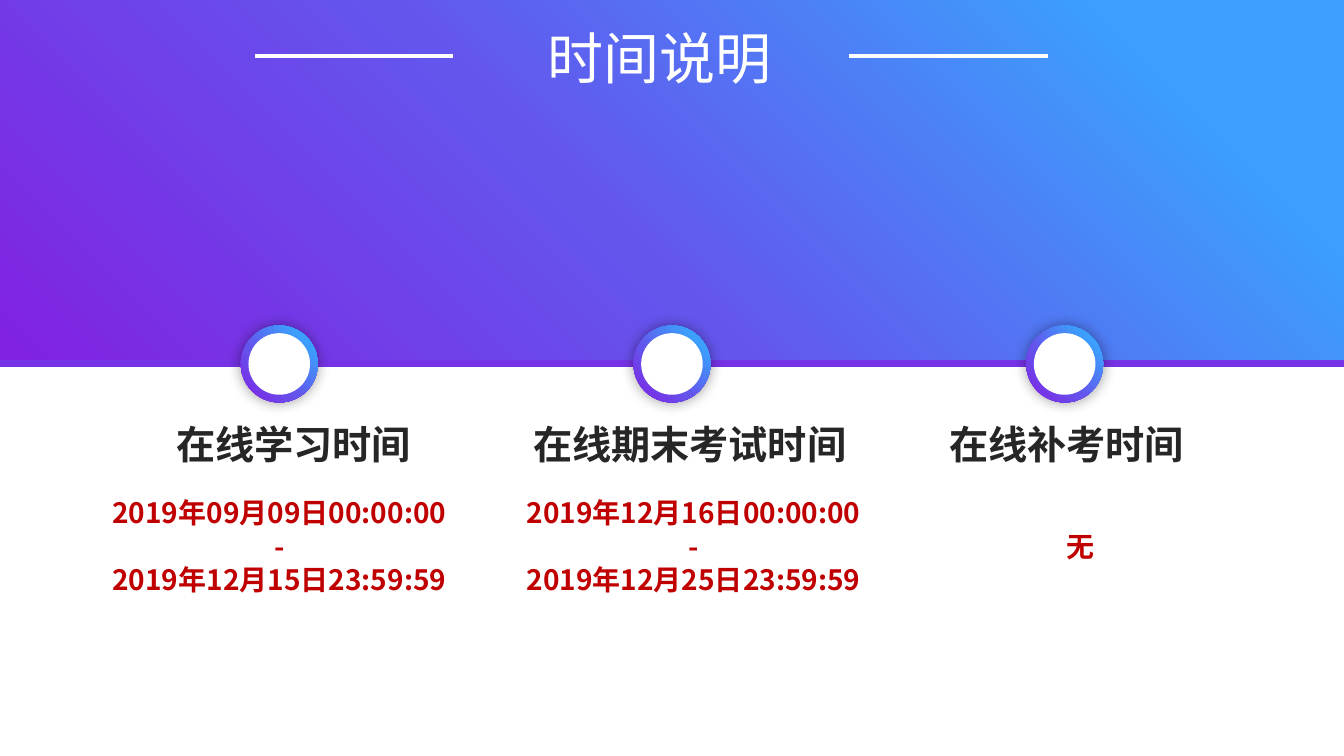
from lxml import etree
from pptx import Presentation
from pptx.dml.color import RGBColor
from pptx.enum.shapes import MSO_CONNECTOR as CONNECTOR, MSO_SHAPE as SHAPE
from pptx.enum.text import MSO_ANCHOR as ANCHOR, PP_ALIGN as ALIGN
from pptx.oxml import parse_xml
from pptx.oxml.ns import qn
from pptx.util import Pt

COLORS = {
    "purple": "8022E2", "indigo": "6455ED", "blue": "3C9FFD", "baseline": "7633E6",
    "white": "FFFFFF", "heading": "262626", "date": "C00000", "shadow": "000000",
}
GRADIENT = ((1, "purple"), (42, "indigo"), (82, "blue"))
FONT = "Noto Sans CJK SC"
DRAWING_NS = 'xmlns:a="http://schemas.openxmlformats.org/drawingml/2006/main"'
SLIDE_WIDTH, SLIDE_HEIGHT = 960, 540
BASELINE_Y = 260
MARKER_SIZE, MARKER_RIM = 55, 5.5
FIRST_MARKER_X, MARKER_PITCH = 199.5, 280.5
DATE_WIDTH = 278

# heading, heading left, heading width, date left, date top, date lines
PERIODS = (
    ("在线学习时间", 118.8, 186, 60.5, 350.6,
     ("2019年09月09日00:00:00", "-", "2019年12月15日23:59:59")),
    ("在线期末考试时间", 373.7, 243.4, 356.4, 350.6,
     ("2019年12月16日00:00:00", "-", "2019年12月25日23:59:59")),
    ("在线补考时间", 671, 201, 633, 375, ("无",)),
)


def color(name):
    return RGBColor.from_string(COLORS[name])


def add_plain_shape(shapes, kind, left, top, width, height):
    """Add a white shape without outline or shadow."""
    shape = shapes.add_shape(kind, Pt(left), Pt(top), Pt(width), Pt(height))
    shape.shadow.inherit = False
    shape.fill.solid()
    shape.fill.fore_color.rgb = color("white")
    shape.line.fill.background()
    return shape


def apply_gradient(shape):
    """Run the theme gradient from bottom left to top right."""
    stops = "".join(
        f'<a:gs pos="{position * 1000}"><a:srgbClr val="{COLORS[name]}"/></a:gs>'
        for position, name in GRADIENT)
    properties = shape.element.spPr
    solid = properties.find(qn("a:solidFill"))
    properties.replace(solid, parse_xml(
        f'<a:gradFill {DRAWING_NS} rotWithShape="1"><a:gsLst>{stops}</a:gsLst>'
        '<a:lin ang="18900000" scaled="0"/></a:gradFill>'))


def apply_glow_shadow(shape):
    """Add a soft shadow with no offset."""
    effects = shape.element.spPr.find(qn("a:effectLst"))
    effects.append(parse_xml(
        f'<a:outerShdw {DRAWING_NS} blurRad="{Pt(10)}" dist="0" dir="0" algn="ctr" '
        f'rotWithShape="0"><a:srgbClr val="{COLORS["shadow"]}">'
        '<a:alpha val="40000"/></a:srgbClr></a:outerShdw>'))


def add_rule(slide, left, y, width, color_name, weight):
    """Add a horizontal line."""
    rule = slide.shapes.add_connector(
        CONNECTOR.STRAIGHT, Pt(left), Pt(y), Pt(left + width), Pt(y))
    rule.line.color.rgb = color(color_name)
    rule.line.width = Pt(weight)
    etree.SubElement(rule.element.spPr, qn("a:effectLst"))


def write_lines(shape, lines, size, color_name, bold, alignment):
    frame = shape.text_frame
    frame.word_wrap = True
    frame.vertical_anchor = ANCHOR.TOP
    frame.text = "\n".join(lines)
    for paragraph in frame.paragraphs:
        paragraph.alignment = alignment
        paragraph.line_spacing = 1
        paragraph.space_before = Pt(0)
        font = paragraph.font
        font.name, font.size, font.bold = FONT, Pt(size), bold
        font.color.rgb = color(color_name)
        for run in paragraph.runs:
            east_asian = etree.SubElement(run.font._element, qn("a:ea"))
            east_asian.set("typeface", FONT)


def add_banner(slide, width, bottom):
    height = 312.5
    banner = add_plain_shape(
        slide.shapes, SHAPE.RECTANGLE, 0, bottom - height, width, height)
    apply_gradient(banner)
    add_rule(slide, 0, bottom, width, "baseline", 5)


def add_title(slide, left, top, width, height):
    title = slide.shapes.title
    title.left, title.top = Pt(left), Pt(top)
    title.width, title.height = Pt(width), Pt(height)
    write_lines(title, ["时间说明"], 40, "white", False, ALIGN.LEFT)
    # bring the title in front of the banner
    slide.shapes.element.append(title.element)
    for rule_left in (left - 201.5, left + 223):
        add_rule(slide, rule_left, 40.2, 141.5, "white", 3)


def add_marker(slide, center_x, center_y):
    group = slide.shapes.add_group_shape()
    for inset in (0, MARKER_RIM):
        size = MARKER_SIZE - 2 * inset
        disc = add_plain_shape(group.shapes, SHAPE.OVAL, center_x - size / 2,
                               center_y - size / 2, size, size)
        if inset == 0:
            apply_gradient(disc)
            apply_glow_shadow(disc)


def add_period(slide, heading, heading_left, heading_width, date_left, date_top, dates):
    heading_box = slide.shapes.add_textbox(
        Pt(heading_left), Pt(296.6), Pt(heading_width), Pt(41))
    write_lines(heading_box, [heading], 28, "heading", True, ALIGN.LEFT)
    date_box = slide.shapes.add_textbox(
        Pt(date_left), Pt(date_top), Pt(DATE_WIDTH), Pt(80 if len(dates) > 1 else 32))
    write_lines(date_box, dates, 20, "date", True, ALIGN.CENTER)


def main():
    presentation = Presentation()
    presentation.slide_width = Pt(SLIDE_WIDTH)
    presentation.slide_height = Pt(SLIDE_HEIGHT)
    slide = presentation.slides.add_slide(presentation.slide_layouts[5])
    add_banner(slide, SLIDE_WIDTH, BASELINE_Y)
    add_title(slide, 383.8, 13, 192, 55.4)
    for index, period in enumerate(PERIODS):
        add_marker(slide, FIRST_MARKER_X + index * MARKER_PITCH, BASELINE_Y)
        add_period(slide, *period)
    presentation.save("out.pptx")


if __name__ == "__main__":
    main()
